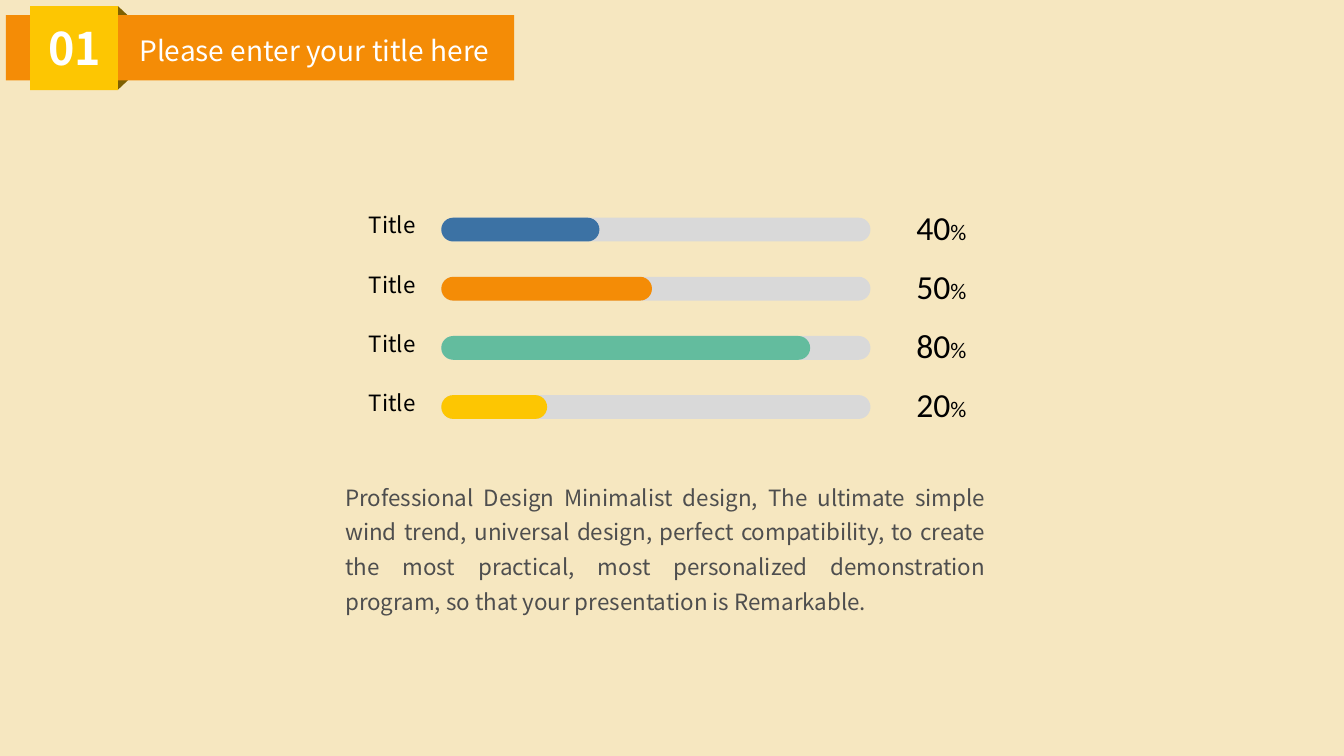
from pptx import Presentation
from pptx.dml.color import RGBColor
from pptx.enum.shapes import MSO_SHAPE
from pptx.enum.text import MSO_ANCHOR, PP_ALIGN
from pptx.util import Pt

RECT, ROUNDED = MSO_SHAPE.RECTANGLE, MSO_SHAPE.ROUNDED_RECTANGLE
TOP, MIDDLE = MSO_ANCHOR.TOP, MSO_ANCHOR.MIDDLE
LEFT, RIGHT = PP_ALIGN.LEFT, PP_ALIGN.RIGHT
CENTER, JUSTIFY = PP_ALIGN.CENTER, PP_ALIGN.JUSTIFY

COLORS = {
    "background": "F6E7C0", "track": "D9D9D9", "blue": "3C72A4",
    "orange": "F48C06", "green": "63BC9E", "yellow": "FDC602",
    "fold": "7F6000", "black": "000000", "gray": "4E4E4E", "white": "FFFFFF",
}
TEXT_FONT, NUMBER_FONT = "Noto Sans CJK SC", "Calibri"


class SlideBuilder:
    """Holds the style and the current slide; all lengths are points."""

    def __init__(self, slide):
        self.slide = slide
        self.paint(slide.background.fill, "background")

    def paint(self, fill, color):
        fill.solid()
        fill.fore_color.rgb = RGBColor.from_string(COLORS[color])

    def finish(self, shape, color):
        self.paint(shape.fill, color)
        shape.line.fill.background()
        shape.shadow.inherit = False

    def block(self, kind, left, top, width, height, color):
        shape = self.slide.shapes.add_shape(
            kind, Pt(left), Pt(top), Pt(width), Pt(height))
        if kind == ROUNDED:
            shape.adjustments[0] = 0.5
        self.finish(shape, color)

    def outline(self, points, color):
        corners = [(Pt(x), Pt(y)) for x, y in points]
        builder = self.slide.shapes.build_freeform(*corners[0])
        builder.add_line_segments(corners[1:], close=True)
        self.finish(builder.convert_to_shape(), color)

    def text(self, left, top, width, height, parts, color="black",
             font=TEXT_FONT, align=LEFT, anchor=MIDDLE, bold=False,
             wrap=True, inset=True):
        """parts is a list of (words, size) runs in one paragraph."""
        box = self.slide.shapes.add_textbox(
            Pt(left), Pt(top), Pt(width), Pt(height))
        frame = box.text_frame
        frame.word_wrap = wrap
        frame.vertical_anchor = anchor
        if not inset:
            frame.margin_left = frame.margin_right = 0
            frame.margin_top = frame.margin_bottom = 0
        paragraph = frame.paragraphs[0]
        paragraph.alignment = align
        for words, size in parts:
            run = paragraph.add_run()
            run.text = words
            run.font.name = font
            run.font.size = Pt(size)
            run.font.bold = bold
            run.font.color.rgb = RGBColor.from_string(COLORS[color])
        return paragraph


def main():
    deck = Presentation()
    deck.slide_width, deck.slide_height = Pt(960), Pt(540)
    page = SlideBuilder(deck.slides.add_slide(deck.slide_layouts[6]))

    # Progress bars: label, track, filled part, percentage
    first_top, row_pitch = 155.5, 42.25
    bar_left, bar_width, bar_height = 315.2, 306.6, 17
    progress = [("40", 113, "blue"), ("50", 150.5, "orange"),
                ("80", 263.5, "green"), ("20", 75.6, "yellow")]
    for row, (percent, filled_width, color) in enumerate(progress):
        top = first_top + row * row_pitch
        page.block(ROUNDED, bar_left, top, bar_width, bar_height, "track")
        page.block(ROUNDED, bar_left, top, filled_width, bar_height, color)
        page.text(232, top - 9.3, 72, 29, [("Title", 16)], align=RIGHT)
        page.text(654.5, top - 7.2, 57, 27.4, [(percent, 24), ("%", 16)],
                  font=NUMBER_FONT, inset=False)

    # Description
    description = page.text(
        239.5, 336.2, 471.6, 100,
        [("Professional Design Minimalist design, The ultimate simple wind "
          "trend, universal design, perfect compatibility, to create the most "
          "practical, most personalized demonstration program, so that your "
          "presentation is Remarkable.", 16)],
        color="gray", align=JUSTIFY, anchor=TOP)
    description.line_spacing = 1.3
    description.space_before = description.space_after = Pt(6)

    # Header ribbon with its folds behind the number tag
    fold_left, fold_right = 84.2, 98
    for tip, base in ((4.3, 17.3), (64.1, 51.1)):
        page.outline([(fold_left, tip), (fold_left, base),
                      (fold_right, base)], "fold")
    page.block(RECT, 4.3, 10.8, 363, 46.6, "orange")
    page.block(RECT, 21.6, 4.3, 62.6, 60, "yellow")
    page.text(25.9, 11.5, 54.7, 46, [("01", 32)], color="white",
              align=CENTER, anchor=TOP, bold=True, wrap=False)
    page.text(66.2, 15.8, 316.8, 39.6, [("Please enter your title here", 20)],
              color="white", align=CENTER)

    deck.save("out.pptx")


if __name__ == "__main__":
    main()
